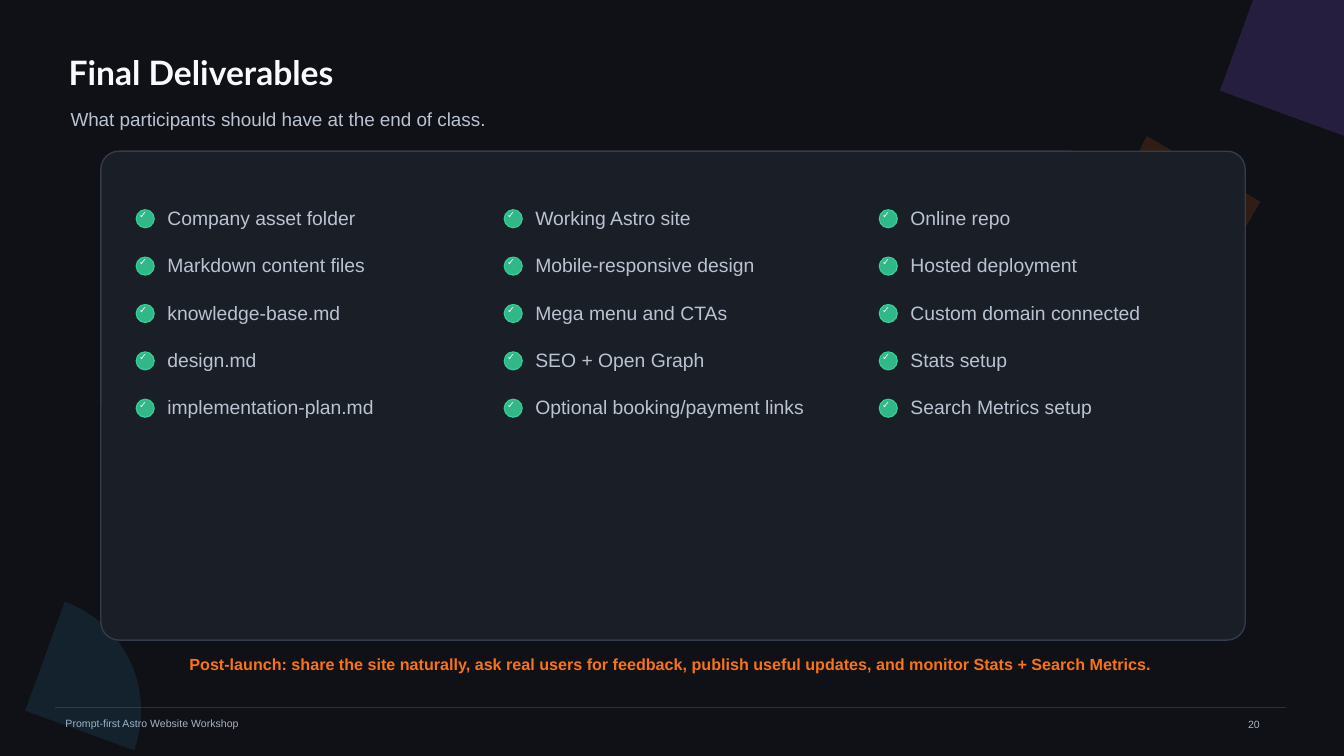
from lxml import etree
from pptx import Presentation
from pptx.dml.color import RGBColor
from pptx.enum.shapes import MSO_CONNECTOR, MSO_SHAPE
from pptx.enum.text import MSO_ANCHOR, MSO_AUTO_SIZE, PP_ALIGN
from pptx.oxml.ns import qn
from pptx.util import Inches, Pt

# Content
TITLE = "Final Deliverables"
SUBTITLE = "What participants should have at the end of class."
DELIVERABLES = [
    (1.35, ["Company asset folder", "Markdown content files", "knowledge-base.md",
            "design.md", "implementation-plan.md"]),
    (5.0, ["Working Astro site", "Mobile-responsive design", "Mega menu and CTAs",
           "SEO + Open Graph", "Optional booking/payment links"]),
    (8.72, ["Online repo", "Hosted deployment", "Custom domain connected",
            "Stats setup", "Search Metrics setup"]),
]
POST_LAUNCH = ("Post-launch: share the site naturally, ask real users for feedback, "
               "publish useful updates, and monitor Stats + Search Metrics.")
WORKSHOP = "Prompt-first Astro Website Workshop"
PAGE = "20"

# Colours
NIGHT = RGBColor(0x0F, 0x11, 0x17)
PANEL = RGBColor(0x1A, 0x1E, 0x27)
PANEL_EDGE = RGBColor(0x34, 0x3B, 0x4A)
RULE = RGBColor(0x2B, 0x30, 0x3B)
WHITE = RGBColor(0xF8, 0xFA, 0xFC)
MIST = RGBColor(0xBA, 0xC3, 0xD2)
GREY = RGBColor(0xAA, 0xB3, 0xC1)
GREEN = RGBColor(0x34, 0xD3, 0x99)
ORANGE = RGBColor(0xF9, 0x73, 0x16)
VIOLET = RGBColor(0x8B, 0x5C, 0xF6)
SKY = RGBColor(0x38, 0xBD, 0xF8)

# Left, top, size, rotation, colour, opacity in percent
ARCS = [
    (10.2, -1, 3.8, 20, VIOLET, 18),
    (11.2, 0.7, 2.6, 210, ORANGE, 14),
    (-0.9, 5.9, 2.3, 20, SKY, 10),
]
FIRST_ROW, ROW_STEP = 2.08, 0.47
DOT = 0.18


def write(frame, text, size, color, font="Arial", bold=False, align=PP_ALIGN.LEFT,
          anchor=MSO_ANCHOR.MIDDLE, inset=(0, 0)):
    frame.word_wrap = True
    frame.auto_size = MSO_AUTO_SIZE.NONE
    frame.vertical_anchor = anchor
    frame.margin_left = frame.margin_right = Inches(inset[0])
    frame.margin_top = frame.margin_bottom = Inches(inset[1])
    paragraph = frame.paragraphs[0]
    paragraph.text = text
    paragraph.alignment = align
    paragraph.font.name = font
    paragraph.font.size = Pt(size)
    paragraph.font.bold = bold
    paragraph.font.color.rgb = color


def add_text(slide, box, text, size, color, **style):
    label = slide.shapes.add_textbox(*map(Inches, box))
    write(label.text_frame, text, size, color, **style)


def add_shape(slide, kind, box, fill, opacity=100, edge=None, edge_width=1):
    shape = slide.shapes.add_shape(kind, *map(Inches, box))
    shape.shadow.inherit = False
    shape.fill.solid()
    shape.fill.fore_color.rgb = fill
    if opacity < 100:
        color = shape.fill._xPr.find(".//" + qn("a:srgbClr"))
        etree.SubElement(color, qn("a:alpha"), val=str(opacity * 1000))
    if edge is None:
        shape.line.fill.background()
    else:
        shape.line.color.rgb = edge
        shape.line.width = Pt(edge_width)
    return shape


def main():
    deck = Presentation()
    deck.slide_width, deck.slide_height = Inches(13.33), Inches(7.5)
    slide = deck.slides.add_slide(deck.slide_layouts[5])
    slide.background.fill.solid()
    slide.background.fill.fore_color.rgb = NIGHT

    # Footer rule and workshop name
    rule = slide.shapes.add_connector(MSO_CONNECTOR.STRAIGHT, Inches(0.55), Inches(7.02),
                                      Inches(12.75), Inches(7.02))
    rule.line.color.rgb = RULE
    rule.line.width = Pt(0.75)
    etree.SubElement(rule._element.spPr, qn("a:effectLst"))
    add_text(slide, (0.65, 7.08, 5.5, 0.2), WORKSHOP, 7.5, GREY)

    # Background arcs
    for left, top, size, turn, color, opacity in ARCS:
        arc = add_shape(slide, MSO_SHAPE.ARC, (left, top, size, size), color, opacity)
        arc.rotation = turn

    # Heading
    title = slide.shapes.title
    title.left, title.top, title.width, title.height = map(Inches, (0.68, 0.45, 10.6, 0.52))
    write(title.text_frame, TITLE, 24, WHITE, font="Lato", bold=True)
    add_text(slide, (0.7, 1.04, 10.6, 0.27), SUBTITLE, 13.5, MIST)

    # Checklist panel
    panel = add_shape(slide, MSO_SHAPE.ROUNDED_RECTANGLE, (1, 1.5, 11.35, 4.85), PANEL,
                      edge=PANEL_EDGE)
    panel.adjustments[0] = 0.037
    for left, items in DELIVERABLES:
        for row, item in enumerate(items):
            top = FIRST_ROW + row * ROW_STEP
            add_shape(slide, MSO_SHAPE.OVAL, (left, top, DOT, DOT), GREEN, 85, GREEN, 0.75)
            add_text(slide, (left + 0.03, top - 0.01, 0.13, 0.12), "✓", 6.8, WHITE, bold=True)
            add_text(slide, (left + 0.31, top - 0.03, 4.75, 0.22), item, 13.8, MIST)

    # Closing advice and page number
    add_text(slide, (1.2, 6.45, 10.9, 0.28), POST_LAUNCH, 11.5, ORANGE, bold=True,
             align=PP_ALIGN.CENTER)
    add_text(slide, (12.28, 7.07, 0.87, 0.33), PAGE, 7.5, GREY, anchor=MSO_ANCHOR.TOP,
             inset=(0.1, 0.05))
    deck.save("out.pptx")


if __name__ == "__main__":
    main()
